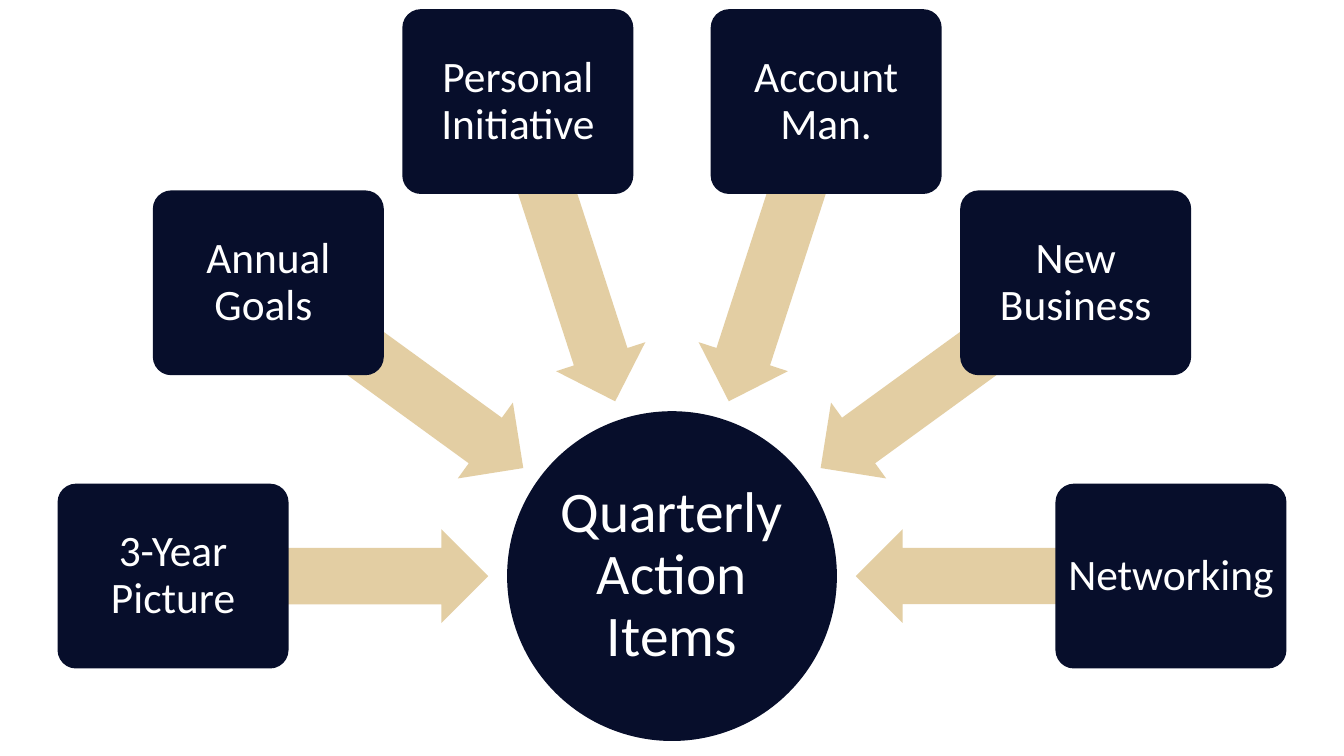
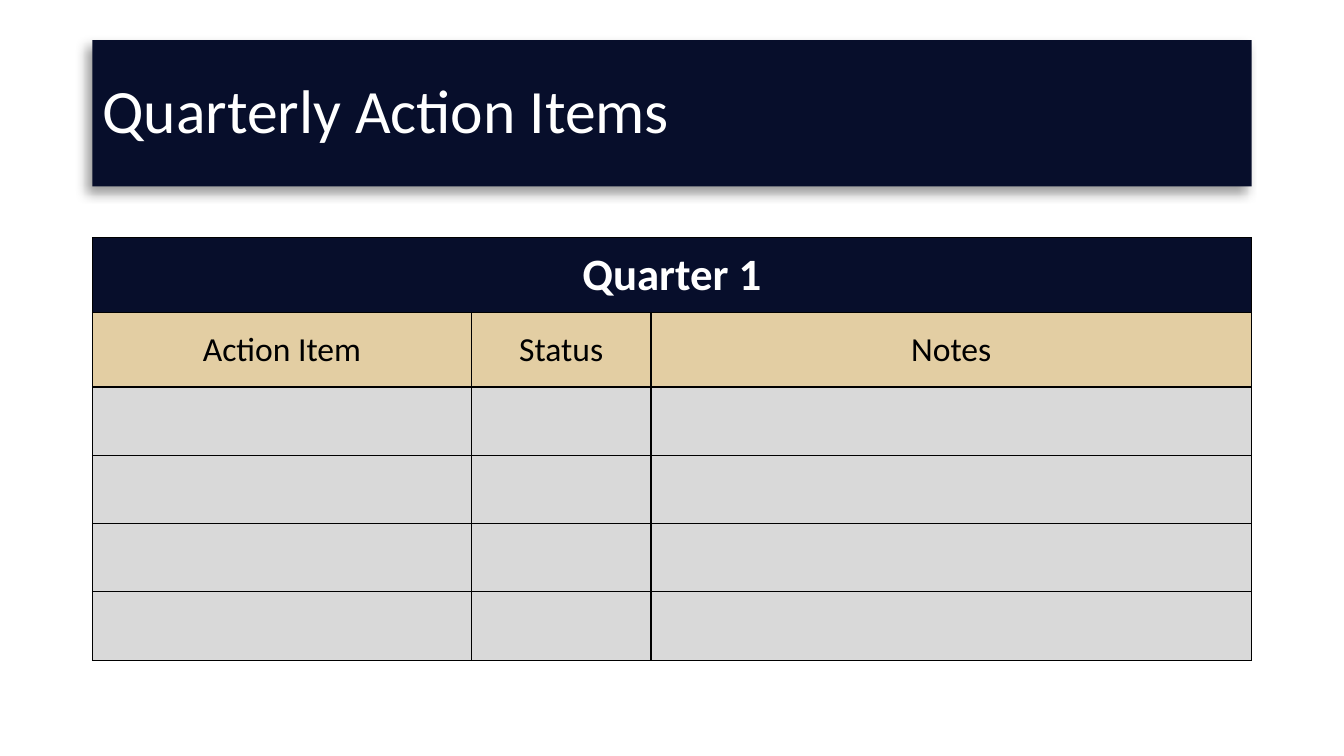
"""Build the quarterly action item slides."""
from math import cos, radians, sin

from lxml.etree import SubElement
from pptx import Presentation
from pptx.dml.color import RGBColor
from pptx.enum.shapes import MSO_SHAPE as SHAPE
from pptx.enum.text import MSO_ANCHOR as ANCHOR, MSO_AUTO_SIZE as AUTO, PP_ALIGN as ALIGN
from pptx.oxml.ns import qn
from pptx.util import Pt

NAVY = RGBColor(0x07, 0x0E, 0x2B)
SAND = RGBColor(0xE3, 0xCE, 0xA3)
GRAY = RGBColor(0xD9, 0xD9, 0xD9)
WHITE = RGBColor(0xFF, 0xFF, 0xFF)
BLACK = RGBColor(0, 0, 0)
FONT = "Calibri"

HUB = (480, 411.5)
TOPICS = ["3-Year Picture", "Annual Goals ", "Personal Initiative",
          "Account Man.", "New Business", "Networking"]
HEADS = ["Action Item", "Status", "Notes"]
COLS = [270.8, 128.2, 429]
ROWS = [53.3, 53.3, 48.8, 48.8, 48.8, 48.8]
LEFT, WIDTH = 66, 828


def paint(item, color):
    """Fill a shape or cell with one colour."""
    item.fill.solid()
    item.fill.fore_color.rgb = color


def write(frame, text, size, color=WHITE, bold=False, align=ALIGN.CENTER, space=None):
    """Add one formatted run to the first paragraph."""
    para = frame.paragraphs[0]
    para.alignment = align
    para.line_spacing = space
    run = para.add_run()
    run.text = text
    font = run.font
    font.name, font.size, font.bold = FONT, Pt(size), bold
    font.color.rgb = color


def shape(slide, kind, mid, size, color, adjust=()):
    """Add a plain shape around a centre point."""
    (x, y), (w, h) = mid, size
    item = slide.shapes.add_shape(kind, Pt(x - w / 2), Pt(y - h / 2), Pt(w), Pt(h))
    for i, value in enumerate(adjust):
        item.adjustments[i] = value
    item.shadow.inherit = False
    item.line.fill.background()
    paint(item, color)
    return item


def label(item, text, size, inset):
    """Centre a wrapped label inside a shape."""
    frame = item.text_frame
    frame.word_wrap = True
    frame.vertical_anchor = ANCHOR.MIDDLE
    frame.margin_left = frame.margin_right = Pt(inset)
    frame.margin_top = frame.margin_bottom = Pt(inset)
    write(frame, text, size, space=0.9)


def orbit(angle, radius):
    """Return the point at an angle around the hub."""
    turn = radians(angle)
    return HUB[0] + radius * cos(turn), HUB[1] + radius * sin(turn)


def wheel(slide):
    """Draw the hub with its topics and arrows."""
    hub = shape(slide, SHAPE.OVAL, HUB, (235.6, 235.6), NAVY)
    label(hub, "Quarterly Action Items", 41, 2)
    for i, topic in enumerate(TOPICS):
        angle = 180 + i * 180 / (len(TOPICS) - 1)
        arrow = shape(slide, SHAPE.LEFT_ARROW, orbit(angle, 244), (225.4, 67),
                      SAND, (0.6, 0.5))
        arrow.rotation = angle % 360
        box = shape(slide, SHAPE.ROUNDED_RECTANGLE, orbit(angle, 356.4),
                    (165, 132), NAVY, (0.1,))
        label(box, topic, 31, 4)


def shade(item):
    """Give a shape a soft shadow to its lower left."""
    effects = SubElement(item._element.spPr, qn("a:effectLst"))
    outer = SubElement(effects, qn("a:outerShdw"), blurRad=str(Pt(8)),
                       dist=str(Pt(6)), dir=str(135 * 60000), algn="tr", rotWithShape="0")
    color = SubElement(outer, qn("a:srgbClr"), val=str(BLACK))
    SubElement(color, qn("a:alpha"), val="40000")


def banner(slide, text):
    """Place the title as a dark band."""
    title = slide.shapes.title
    title.left, title.top = Pt(LEFT), Pt(28.75)
    title.width, title.height = Pt(WIDTH), Pt(104.4)
    paint(title, NAVY)
    shade(title)
    frame = title.text_frame
    frame.auto_size = AUTO.NONE
    frame.vertical_anchor = ANCHOR.MIDDLE
    write(frame, text, 44, align=ALIGN.LEFT, space=0.9)


def border(cell):
    """Draw thin black lines around a cell."""
    props = cell._tc.get_or_add_tcPr()
    for side in ("lnL", "lnR", "lnT", "lnB"):
        line = SubElement(props, qn("a:" + side), w=str(Pt(1)))
        fill = SubElement(line, qn("a:solidFill"))
        SubElement(fill, qn("a:srgbClr"), val=str(BLACK))


def entry(cell, text, size, color, bold=False):
    """Write a centred heading in a cell."""
    cell.vertical_anchor = ANCHOR.MIDDLE
    cell.margin_left = cell.margin_right = Pt(5)
    cell.margin_top = cell.margin_bottom = 0
    write(cell.text_frame, text, size, color, bold)


def plan(slide):
    """Add the table for one quarter."""
    table = slide.shapes.add_table(len(ROWS), len(COLS), Pt(LEFT), Pt(169.8),
                                   Pt(WIDTH), Pt(sum(ROWS))).table
    table.first_row = table.horz_banding = False
    for col, width in zip(table.columns, COLS):
        col.width = Pt(width)
    fills = [NAVY, SAND] + [GRAY] * (len(ROWS) - 2)
    for row, height, color in zip(table.rows, ROWS, fills):
        row.height = Pt(height)
        for cell in row.cells:
            border(cell)
            paint(cell, color)
    table.cell(0, 0).merge(table.cell(0, len(COLS) - 1))
    entry(table.cell(0, 0), "Quarter 1", 32, WHITE, True)
    for i, head in enumerate(HEADS):
        entry(table.cell(1, i), head, 24, BLACK)


def main():
    """Build and save both slides."""
    deck = Presentation()
    deck.slide_width, deck.slide_height = Pt(960), Pt(540)
    wheel(deck.slides.add_slide(deck.slide_layouts[6]))
    slide = deck.slides.add_slide(deck.slide_layouts[5])
    banner(slide, "Quarterly Action Items")
    plan(slide)
    deck.save("out.pptx")


if __name__ == "__main__":
    main()
